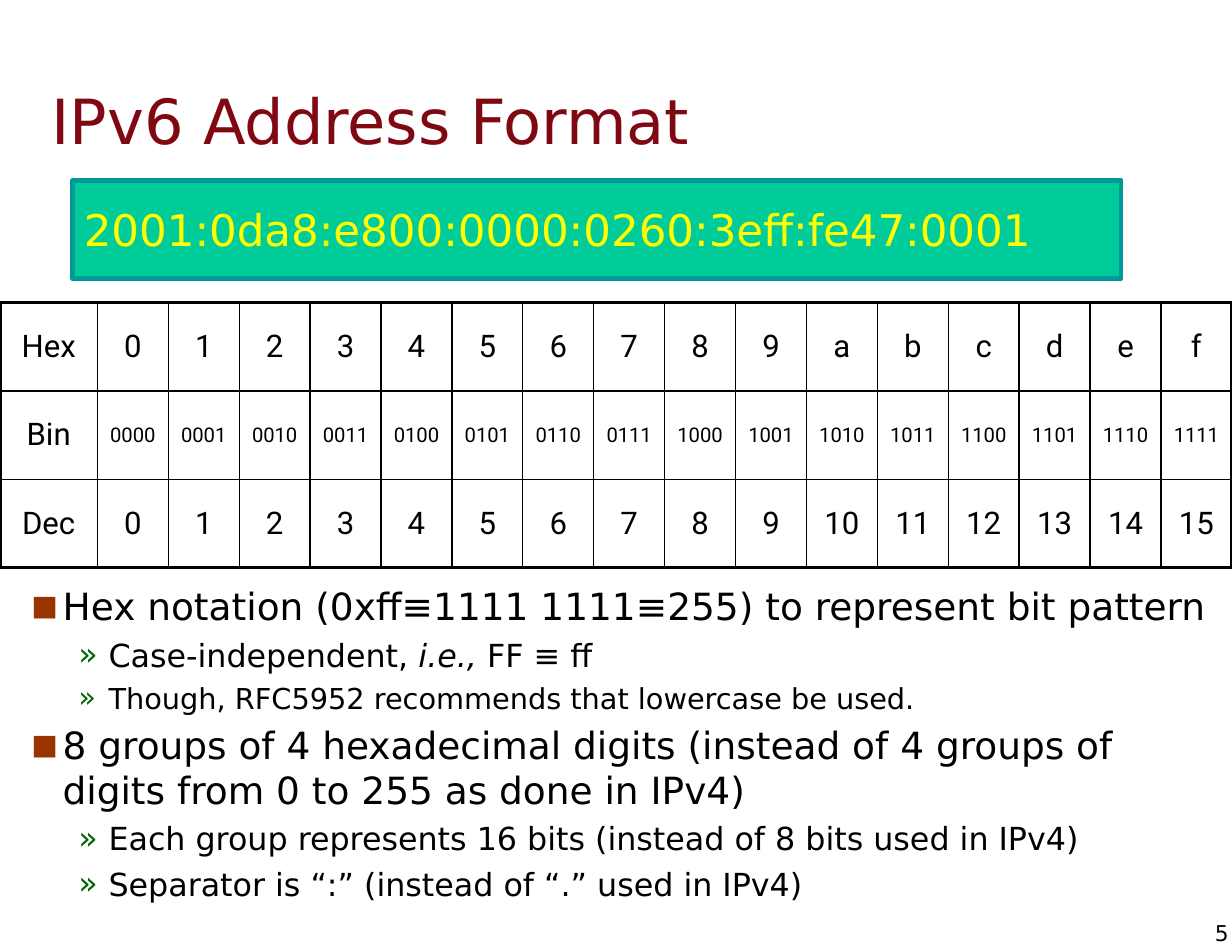
"""Build the IPv6 address format slide."""
from dataclasses import dataclass
from typing import Any

from lxml.etree import SubElement
from pptx import Presentation
from pptx.dml.color import RGBColor
from pptx.enum.shapes import MSO_SHAPE as Shape
from pptx.enum.text import MSO_ANCHOR as Anchor, PP_ALIGN as Align
from pptx.oxml.ns import qn
from pptx.util import Inches, Pt

COLORS = {
    "text": "000000", "title": "7F0813", "square": "993300", "chevron": "006600",
    "banner": "00CC99", "banner_line": "009999", "address": "FFFF00",
}
LEVELS = [
    {"mark": "■", "color": "square", "scale": 75, "margin": 0.42, "indent": -0.28},
    {"mark": "»", "color": "chevron", "scale": 100, "margin": 0.83, "indent": -0.27},
]
POINTS = [
    (0, 24.1, ["Hex notation (0xff≡1111 1111≡255) to represent bit pattern"]),
    (1, 20.4, ["Case-independent, ", "i.e., ", "FF ≡ ff"]),
    (1, 18.5, ["Though, RFC5952 recommends that lowercase be used."]),
    (0, 24.1, ["8 groups of 4 hexadecimal digits (instead of 4 groups of "
               "digits from 0 to 255 as done in IPv4)"]),
    (1, 20.4, ["Each group represents 16 bits (instead of 8 bits used in IPv4)"]),
    (1, 20.4, ["Separator is “:” (instead of “.” used in IPv4)"]),
]


def rgb(name):
    return RGBColor.from_string(COLORS[name])


def add_text(paragraph, text, size=20, color="text", font="DejaVu Sans",
             align=Align.LEFT, italic=False):
    paragraph.alignment = align
    run = paragraph.add_run()
    run.text = text
    run.font.size = Pt(size)
    run.font.name = font
    run.font.italic = italic
    run.font.color.rgb = rgb(color)


def add_bullet(paragraph, mark, color, scale, margin, indent):
    properties = paragraph._p.get_or_add_pPr()
    properties.set("marL", str(Inches(margin)))
    properties.set("indent", str(Inches(indent)))
    bullet_color = SubElement(properties, qn("a:buClr"))
    SubElement(bullet_color, qn("a:srgbClr"), val=COLORS[color])
    SubElement(properties, qn("a:buSzPct"), val=str(scale * 1000))
    SubElement(properties, qn("a:buFont"), typeface="DejaVu Sans")
    SubElement(properties, qn("a:buChar"), char=mark)


def set_border(cell, side, width):
    line = SubElement(cell._tc.get_or_add_tcPr(), qn(f"a:ln{side}"), w=str(Pt(width)))
    fill = SubElement(line, qn("a:solidFill"))
    SubElement(fill, qn("a:srgbClr"), val=COLORS["text"])


@dataclass
class SlideBuilder:
    """Hold the table style and the current slide."""
    slide: Any
    table_font: str = "Roboto"
    outer_line: float = 2.25
    inner_line: float = 1

    def frame(self, shape, inset_x, inset_y, anchor, wrap=True):
        frame = shape.text_frame
        frame.word_wrap = wrap
        frame.vertical_anchor = anchor
        frame.margin_left = frame.margin_right = Inches(inset_x)
        frame.margin_top = frame.margin_bottom = Inches(inset_y)
        return frame

    def text_box(self, bounds, inset_x=0.11, inset_y=0.06, anchor=Anchor.MIDDLE, wrap=True):
        shape = self.slide.shapes.add_textbox(*map(Inches, bounds))
        return self.frame(shape, inset_x, inset_y, anchor, wrap)

    def label(self, bounds, text, inset_x=0.11, inset_y=0.06, wrap=True, **style):
        frame = self.text_box(bounds, inset_x, inset_y, wrap=wrap)
        add_text(frame.paragraphs[0], text, **style)

    def banner(self, bounds, text):
        shape = self.slide.shapes.add_shape(Shape.RECTANGLE, *map(Inches, bounds))
        shape.shadow.inherit = False
        shape.fill.solid()
        shape.fill.fore_color.rgb = rgb("banner")
        shape.line.color.rgb = rgb("banner_line")
        shape.line.width = Pt(3)
        frame = self.frame(shape, 0.1, 0.2, Anchor.TOP)
        add_text(frame.paragraphs[0], text, size=28, color="address")

    def bullets(self, bounds, points):
        frame = self.text_box(bounds, anchor=Anchor.TOP)
        for index, (level, size, texts) in enumerate(points):
            paragraph = frame.add_paragraph() if index else frame.paragraphs[0]
            paragraph.level = level
            paragraph.space_before = Pt(4.5 if index else 0)
            add_bullet(paragraph, **LEVELS[level])
            for text in texts:
                add_text(paragraph, text, size=size, italic=text == "i.e., ")

    def table(self, bounds, rows, first_width):
        row_count, column_count = len(rows), len(rows[0][1])
        table = self.slide.shapes.add_table(
            row_count, column_count, *map(Inches, bounds)).table
        table.first_row = table.horz_banding = False
        for index, column in enumerate(table.columns):
            rest = (bounds[2] - first_width) / (column_count - 1)
            column.width = Inches(rest if index else first_width)
        for row, (digit_size, values) in enumerate(rows):
            for column, value in enumerate(values):
                cell = table.cell(row, column)
                cell.vertical_anchor = Anchor.MIDDLE
                cell.margin_left = cell.margin_right = Inches(0.11 if column == 0 else 0.05)
                cell.margin_top = cell.margin_bottom = Inches(0.06)
                add_text(cell.text_frame.paragraphs[0], value, font=self.table_font,
                         size=digit_size if column else 20, align=Align.CENTER)
                edges = {"L": column == 0, "R": column == column_count - 1,
                         "T": row == 0, "B": row == row_count - 1}
                for side, outer in edges.items():
                    set_border(cell, side, self.outer_line if outer else self.inner_line)
                cell.fill.background()


def main():
    presentation = Presentation()
    presentation.slide_width, presentation.slide_height = Inches(11), Inches(8.5)
    builder = SlideBuilder(presentation.slides.add_slide(presentation.slide_layouts[6]))
    builder.label((10.72, 8.21, 0.25, 0.24), "5", inset_x=0, inset_y=0, wrap=False,
                  size=14, align=Align.RIGHT)
    builder.label((0.35, 0.49, 9.35, 1.16), "IPv6 Address Format", size=40, color="title")
    builder.bullets((0.03, 5.15, 10.97, 3.28), POINTS)
    builder.banner((0.65, 1.61, 9.36, 0.88), "2001:0da8:e800:0000:0260:3eff:fe47:0001")
    digits = range(16)
    rows = [
        (20, ["Hex"] + [f"{digit:x}" for digit in digits]),
        (13, ["Bin"] + [f"{digit:04b}" for digit in digits]),
        (20, ["Dec"] + [str(digit) for digit in digits]),
    ]
    builder.table((0, 2.7, 11, 2.37), rows, first_width=0.87)
    presentation.save("out.pptx")


if __name__ == "__main__":
    main()
